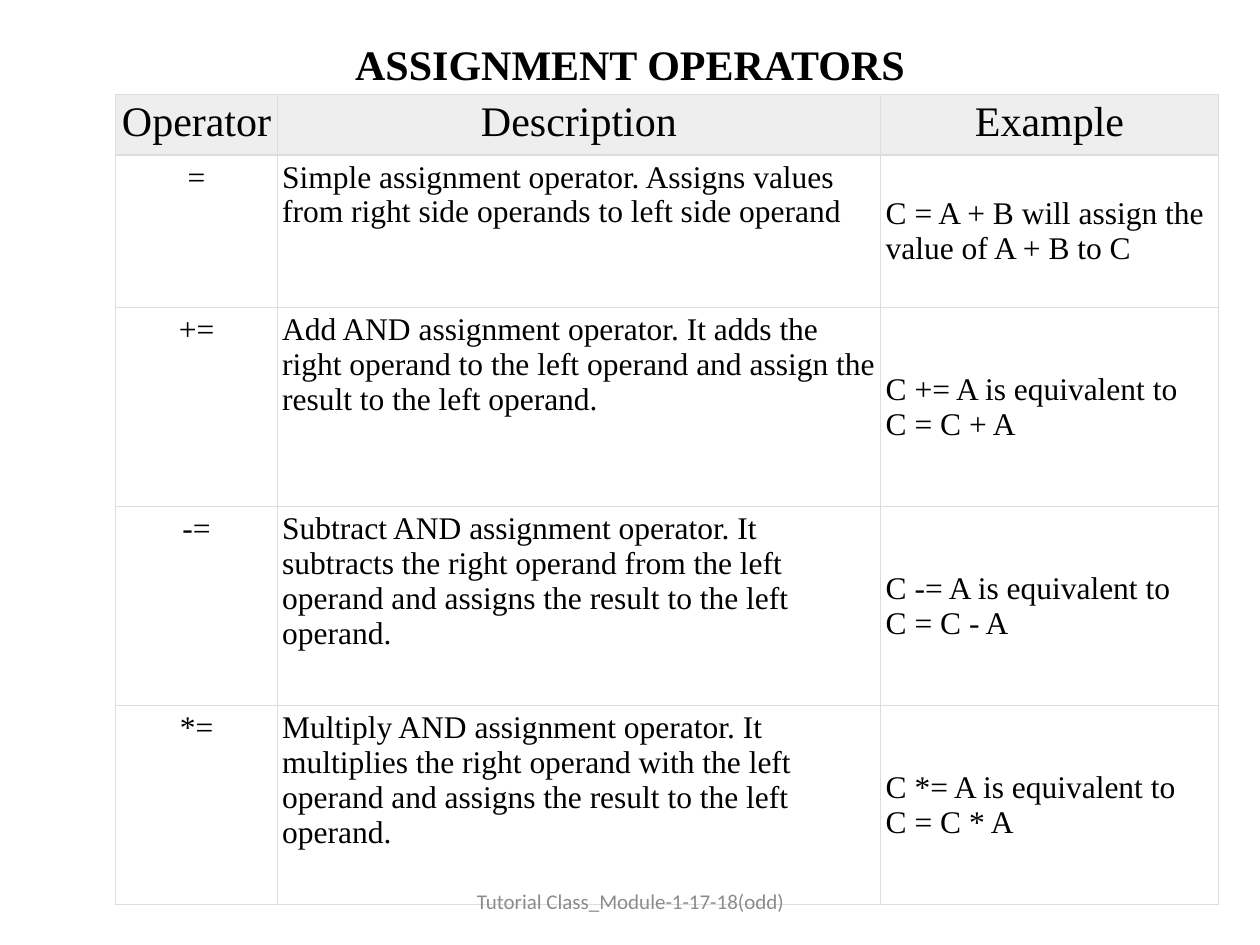
from dataclasses import dataclass

from lxml import etree
from pptx import Presentation
from pptx.dml.color import RGBColor
from pptx.enum.text import MSO_ANCHOR, PP_ALIGN
from pptx.oxml.ns import qn
from pptx.util import Inches, Pt

LEFT, CENTER = PP_ALIGN.LEFT, PP_ALIGN.CENTER
TOP, MIDDLE = MSO_ANCHOR.TOP, MSO_ANCHOR.MIDDLE
BLACK = RGBColor(0x00, 0x00, 0x00)
GRAY = RGBColor(0x8C, 0x8C, 0x8C)
HEADER_FILL = RGBColor(0xEE, 0xEE, 0xEE)
BORDER = RGBColor(0xDD, 0xDD, 0xDD)
SERIF, SANS = "Times New Roman", "Calibri"

COLUMN_WIDTHS = (1.28, 4.79, 2.68)
ROW_HEIGHTS = (0.46, 1.21, 1.58, 1.58, 1.58)
CELL_MARGIN = 0.04
HEADINGS = ("Operator", "Description", "Example")


@dataclass(frozen=True)
class TextStyle:
    size: float
    name: str = SERIF
    color: RGBColor = BLACK
    bold: bool = False
    align: PP_ALIGN = CENTER
    anchor: MSO_ANCHOR = MIDDLE


@dataclass(frozen=True)
class Operator:
    symbol: str
    description: str
    example: str


TITLE = TextStyle(24, bold=True)
FOOTER = TextStyle(12, name=SANS, color=GRAY)
HEADER = TextStyle(24, anchor=TOP)
BODY_STYLES = (
    TextStyle(18, anchor=TOP),
    TextStyle(18, align=LEFT, anchor=TOP),
    TextStyle(18, align=LEFT),
)

OPERATORS = (
    Operator(
        "=",
        "Simple assignment operator. Assigns values from right side operands to left side operand",
        "C = A + B will assign the value of A + B to C",
    ),
    Operator(
        "+=",
        "Add AND assignment operator. It adds the right operand to the left operand "
        "and assign the result to the left operand.",
        "C += A is equivalent to\nC = C + A",
    ),
    Operator(
        "-=",
        "Subtract AND assignment operator. It subtracts the right operand from the left operand "
        "and assigns the result to the left operand.",
        "C -= A is equivalent to\nC = C - A",
    ),
    Operator(
        "*=",
        "Multiply AND assignment operator. It multiplies the right operand with the left operand "
        "and assigns the result to the left operand.",
        "C *= A is equivalent to\nC = C * A",
    ),
)


def write_text(frame, text: str, style: TextStyle) -> None:
    frame.text = text
    values = {"size": Pt(style.size), "name": style.name, "bold": style.bold}
    for para in frame.paragraphs:
        para.alignment = style.align
        for span in para.runs:
            for key, value in values.items():
                setattr(span.font, key, value)
            span.font.color.rgb = style.color


def add_text(page, left: float, top: float, width: float, height: float,
             text: str, style: TextStyle) -> None:
    box = page.shapes.add_textbox(Inches(left), Inches(top), Inches(width), Inches(height))
    box.text_frame.word_wrap = True
    box.text_frame.vertical_anchor = style.anchor
    write_text(box.text_frame, text, style)


def add_borders(cell) -> None:
    properties = cell._tc.get_or_add_tcPr()
    for index, side in enumerate(("lnL", "lnR", "lnT", "lnB")):
        line = etree.Element(qn(f"a:{side}"), w=str(Pt(0.75)))
        fill = etree.SubElement(line, qn("a:solidFill"))
        etree.SubElement(fill, qn("a:srgbClr"), val=str(BORDER))
        properties.insert(index, line)


def fill_cell(cell, text: str, style: TextStyle, is_header: bool) -> None:
    margin = Inches(CELL_MARGIN)
    values = {"margin_left": margin, "margin_right": margin, "margin_top": margin,
              "margin_bottom": margin, "vertical_anchor": style.anchor}
    for key, value in values.items():
        setattr(cell, key, value)
    if is_header:
        cell.fill.solid()
        cell.fill.fore_color.rgb = HEADER_FILL
    else:
        cell.fill.background()
    add_borders(cell)
    write_text(cell.text_frame, text, style)


def add_operator_table(page, left: float, top: float) -> None:
    frame = page.shapes.add_table(
        len(ROW_HEIGHTS), len(COLUMN_WIDTHS), Inches(left), Inches(top),
        Inches(sum(COLUMN_WIDTHS)), Inches(sum(ROW_HEIGHTS)))
    table = frame.table
    table.first_row = False
    table.horz_banding = False
    for column, width in zip(table.columns, COLUMN_WIDTHS):
        column.width = Inches(width)
    for row, height in zip(table.rows, ROW_HEIGHTS):
        row.height = Inches(height)
    for cell, heading in zip(table.rows[0].cells, HEADINGS):
        fill_cell(cell, heading, HEADER, True)
    for number, operator in enumerate(OPERATORS, start=1):
        texts = (operator.symbol, operator.description, operator.example)
        for cell, text, style in zip(table.rows[number].cells, texts, BODY_STYLES):
            fill_cell(cell, text, style, False)


def main() -> None:
    deck = Presentation()
    deck.slide_width, deck.slide_height = Inches(10), Inches(7.5)
    page = deck.slides.add_slide(deck.slide_layouts[6])
    add_text(page, 0.5, 0.17, 9, 0.67, "ASSIGNMENT OPERATORS", TITLE)
    add_operator_table(page, 0.92, 0.75)
    add_text(page, 3.42, 6.95, 3.17, 0.4, "Tutorial Class_Module-1-17-18(odd)", FOOTER)
    deck.save("out.pptx")


if __name__ == "__main__":
    main()
